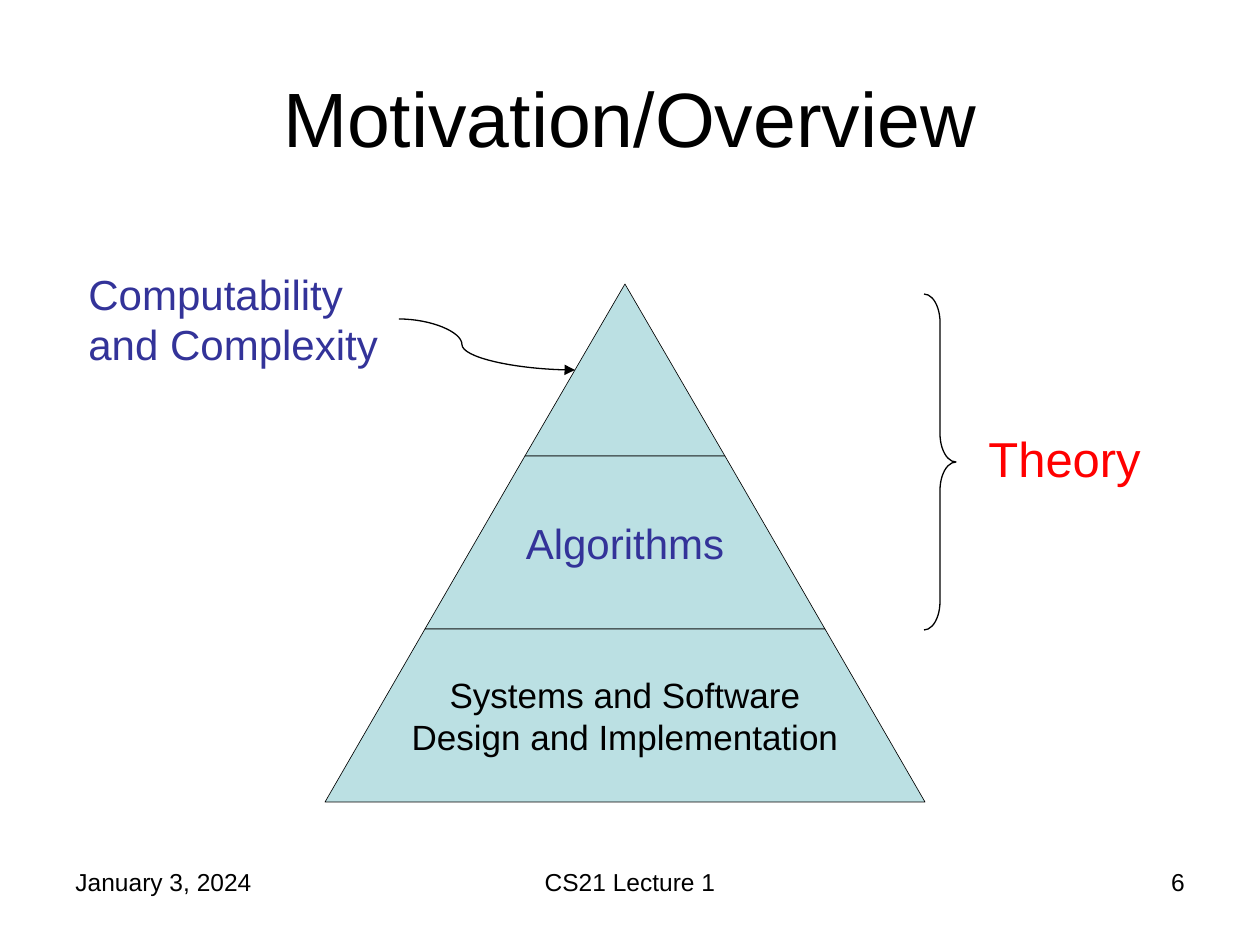
import lxml.etree
import pptx
import pptx.dml.color
import pptx.enum.shapes
import pptx.enum.text
import pptx.oxml.ns
import pptx.util

SCALE = 914400 / 126
ALIGN = pptx.enum.text.PP_ALIGN
MIDDLE = pptx.enum.text.MSO_ANCHOR.MIDDLE
BLACK, BLUE, RED, TEAL = "000000", "333399", "FF0000", "BBE0E3"


def px(length):
    return pptx.util.Emu(round(length * SCALE))


def color(code):
    return pptx.dml.color.RGBColor.from_string(code)


class Slide:
    """Draws styled elements on the current page."""

    font = "Arial"

    def __init__(self, page):
        self.page = page
        self.shapes = page.shapes

    def fill_text(self, frame, words, size, code=BLACK, align=ALIGN.LEFT):
        frame.text = words
        for para in frame.paragraphs:
            para.alignment = align
            for span in para.runs:
                span.font.name = self.font
                span.font.size = pptx.util.Pt(size)
                span.font.color.rgb = color(code)

    def outline(self, shape, width):
        shape.line.color.rgb = color(BLACK)
        shape.line.width = pptx.util.Pt(width)

    def title(self, words, left, top, width, height):
        box = self.shapes.title
        box.left, box.top, box.width, box.height = map(px, (left, top, width, height))
        box.text_frame.vertical_anchor = MIDDLE
        self.fill_text(box.text_frame, words, 44, align=ALIGN.CENTER)

    def text(self, words, left, top, width, height, size, code=BLACK, align=ALIGN.LEFT):
        box = self.shapes.add_textbox(px(left), px(top), px(width), px(height))
        box.text_frame.word_wrap = True
        self.fill_text(box.text_frame, words, size, code, align)

    def pyramid(self, center, top, half_width, height, tiers):
        group = self.shapes.add_group_shape()
        count = len(tiers)
        for index, (words, size, code) in enumerate(tiers):
            upper, lower = (half_width * step // count for step in (index, index + 1))
            high, low = (top + height * step // count for step in (index, index + 1))
            corners = [(center - upper, high), (center + upper, high),
                       (center + lower, low)]
            builder = group.shapes.build_freeform(center - lower, low, scale=SCALE)
            builder.add_line_segments(dict.fromkeys(corners), close=True)
            tier = builder.convert_to_shape()
            tier.shadow.inherit = False
            tier.fill.solid()
            tier.fill.fore_color.rgb = color(TEAL)
            self.outline(tier, 0.37)
            if words:
                tier.text_frame.word_wrap = False
                tier.text_frame.vertical_anchor = MIDDLE
                self.fill_text(tier.text_frame, words, size, code, ALIGN.CENTER)

    def curved_arrow(self, start, end, bend):
        kind = pptx.enum.shapes.MSO_CONNECTOR.CURVE
        arrow = self.shapes.add_connector(kind, *map(px, (*start, *end)))
        self.outline(arrow, 0.75)
        qn = pptx.oxml.ns.qn
        properties = arrow._element.spPr
        guides = properties.find(qn("a:prstGeom")).get_or_add_avLst()
        lxml.etree.SubElement(guides, qn("a:gd"), name="adj1", fmla=f"val {bend}")
        line = properties.find(qn("a:ln"))
        lxml.etree.SubElement(line, qn("a:tailEnd"), type="triangle")
        lxml.etree.SubElement(properties, qn("a:effectLst"))

    def brace(self, left, top, width, height):
        kind = pptx.enum.shapes.MSO_SHAPE.RIGHT_BRACE
        brace = self.shapes.add_shape(kind, px(left), px(top), px(width), px(height))
        brace.adjustments[0] = 0.89
        brace.shadow.inherit = False
        brace.fill.background()
        self.outline(brace, 0.75)


def main():
    deck = pptx.Presentation()
    deck.slide_width, deck.slide_height = px(1260), px(945)
    slide = Slide(deck.slides.add_slide(deck.slide_layouts[5]))

    slide.title("Motivation/Overview", 63, 38, 1134, 158)
    slide.pyramid(625, 284, 300, 518, [
        ("", 24, BLUE),
        ("Algorithms", 24, BLUE),
        ("Systems and Software\nDesign and Implementation", 20, BLACK),
    ])
    slide.text("Computability and Complexity", 76, 262, 323, 113, 24, BLUE)
    slide.curved_arrow((399, 319), (575, 370), 35800)
    slide.brace(924, 294, 32, 336)
    slide.text("Theory", 976, 422, 231, 72, 28, RED)

    for words, left, width, align in [
        ("January 3, 2024", 63, 294, ALIGN.LEFT),
        ("CS21 Lecture 1", 430, 400, ALIGN.CENTER),
        ("6", 903, 294, ALIGN.RIGHT),
    ]:
        slide.text(words, left, 861, width, 66, 14, align=align)

    deck.save("out.pptx")


if __name__ == "__main__":
    main()
